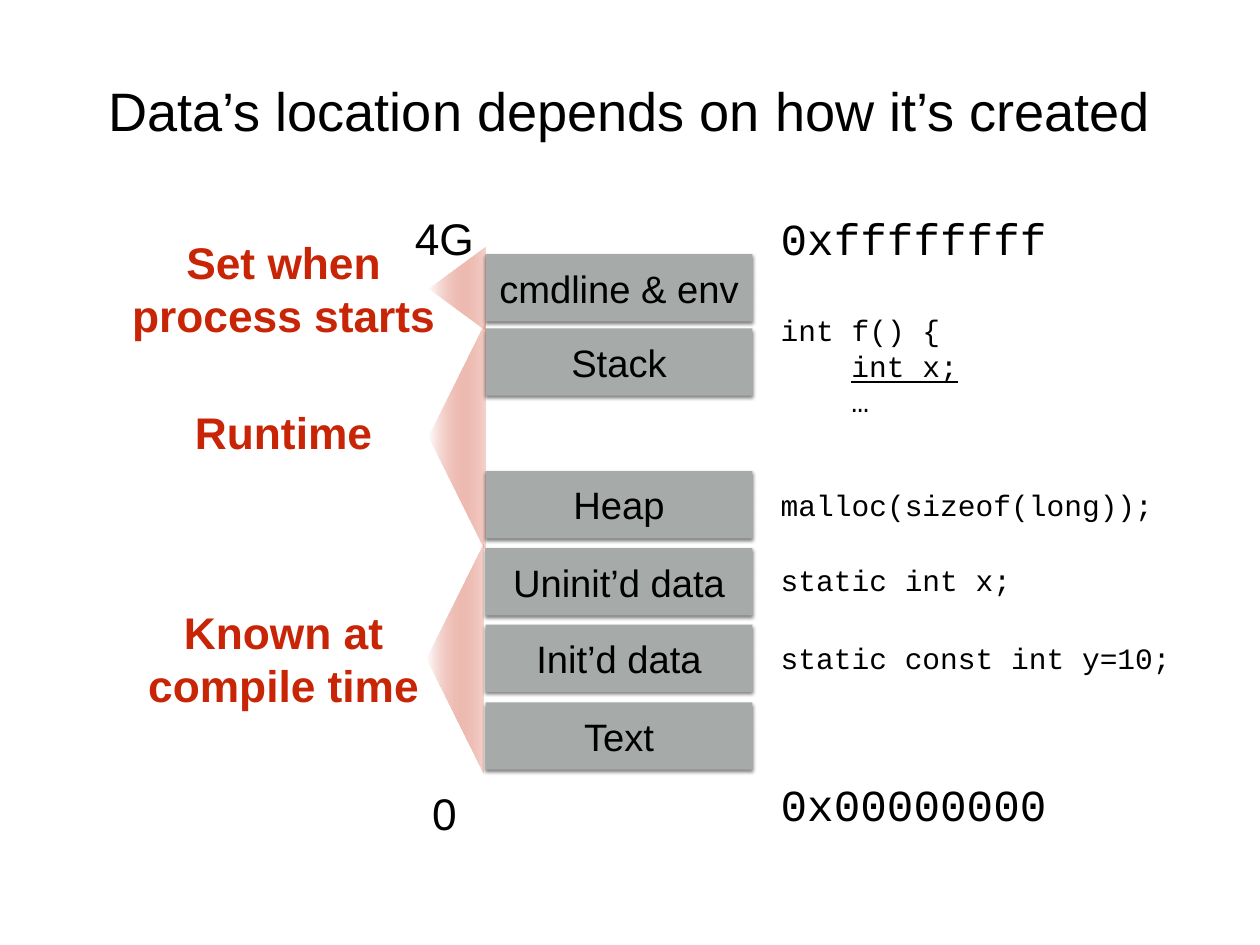
"""Build a slide that maps kinds of data to regions of process memory."""
from lxml import etree
from pptx import Presentation
from pptx.dml.color import RGBColor
from pptx.enum.shapes import MSO_SHAPE
from pptx.enum.text import MSO_ANCHOR, MSO_AUTO_SIZE, PP_ALIGN
from pptx.oxml.ns import qn
from pptx.util import Cm, Pt

RECT = MSO_SHAPE.RECTANGLE
MIDDLE = MSO_ANCHOR.MIDDLE
FIXED = MSO_AUTO_SIZE.NONE
LEFT, CENTER = PP_ALIGN.LEFT, PP_ALIGN.CENTER
HUES = {"ink": "000000", "box": "A6AAA9", "red": "C82506", "white": "FFFFFF"}
MONO = "Courier New"


def write(shape, text, size=36, font="Arial", hue="ink", bold=False,
          align=CENTER, inset=0, indent=0):
    """Fill a shape with one paragraph per line, indenting all but the first."""
    frame = shape.text_frame
    frame.word_wrap = True
    frame.auto_size = FIXED
    frame.vertical_anchor = MIDDLE
    frame.margin_left = frame.margin_right = Cm(inset)
    frame.margin_top = frame.margin_bottom = Cm(inset)
    for i, line in enumerate(text.split("\n")):
        para = frame.add_paragraph() if i else frame.paragraphs[0]
        para.alignment = align
        if i and indent:
            para._p.get_or_add_pPr().set("marL", str(Cm(indent)))
        run = para.add_run()
        run.text = line
        run.font.size = Pt(size)
        run.font.name = font
        run.font.bold = bold
        run.font.color.rgb = RGBColor.from_string(HUES[hue])
    return frame


deck = Presentation()
deck.slide_width, deck.slide_height = Cm(36.12), Cm(27.1)
slide = deck.slides.add_slide(deck.slide_layouts[5])
shapes = slide.shapes

title = shapes.title
title.left, title.top, title.width, title.height = Cm(2.64), Cm(1.24), Cm(30.84), Cm(3.84)
write(title, "Data’s location depends on how it’s created", size=44)

regions = [
    ("cmdline & env", 7.29),
    ("Stack", 9.42),
    ("Heap", 13.51),
    ("Uninit’d data", 15.72),
    ("Init’d data", 17.91),
    ("Text", 20.14),
]
for name, top in regions:
    box = shapes.add_shape(RECT, Cm(13.92), Cm(top), Cm(7.65), Cm(1.93))
    box.fill.solid()
    box.fill.fore_color.rgb = RGBColor.from_string(HUES["box"])
    box.line.fill.background()
    box.shadow.inherit = False
    effects = box._element.spPr.find(qn("a:effectLst"))
    shade = etree.SubElement(effects, qn("a:outerShdw"), blurRad=str(Pt(3)),
                             dist=str(Pt(2)), dir="5400000", rotWithShape="0")
    tone = etree.SubElement(shade, qn("a:srgbClr"), val=HUES["ink"])
    etree.SubElement(tone, qn("a:alpha"), val="50000")
    write(box, name, size=31)

for mark, top in [("4G", 5.92), ("0", 22.4)]:
    note = shapes.add_textbox(Cm(11.74), Cm(top), Cm(2), Cm(1.8))
    write(note, mark, inset=0.15)

codes = [
    ("0xffffffff", 5.92, 1.8, 36),
    ("int f() {\nint x;\n…", 8.81, 3.35, 24),
    ("malloc(sizeof(long));", 13.82, 1.3, 24),
    ("static int x;", 15.98, 1.3, 24),
    ("static const int y=10;", 18.21, 1.3, 24),
    ("0x00000000", 22.15, 1.8, 36),
]
for code, top, height, size in codes:
    note = shapes.add_textbox(Cm(22.23), Cm(top), Cm(12), Cm(height))
    frame = write(note, code, size=size, font=MONO, align=LEFT, inset=0.15, indent=2.03)
    if len(frame.paragraphs) > 1:
        frame.paragraphs[1].runs[0].font.underline = True

phases = [
    ("Set when\nprocess starts", 8.27, 12.29, 8.27, 2.4),
    ("Runtime", 12.38, 12.29, 12.52, 6.64),
    ("Known at\ncompile time", 18.88, 12.24, 18.88, 6.64),
]
for phase, mid, tip, level, span in phases:
    label = shapes.add_textbox(Cm(3.63), Cm(mid - 1.66), Cm(9), Cm(3.32))
    write(label, phase, hue="red", bold=True)

    path = shapes.build_freeform(Cm(tip), Cm(level))
    base = Cm(tip + 1.63)
    path.add_line_segments([(base, Cm(level - span / 2)), (base, Cm(level + span / 2))])
    fan = path.convert_to_shape()
    fan.shadow.inherit = False
    fan.line.fill.background()
    fan.fill.gradient()
    fan.fill.gradient_angle = 0
    for stop, hue in zip(fan.fill.gradient_stops, ("white", "red")):
        stop.color.rgb = RGBColor.from_string(HUES[hue])
    tint = list(fan._element.spPr.iter(qn("a:srgbClr")))[-1]
    etree.SubElement(tint, qn("a:alpha"), val="20000")

deck.save("out.pptx")
